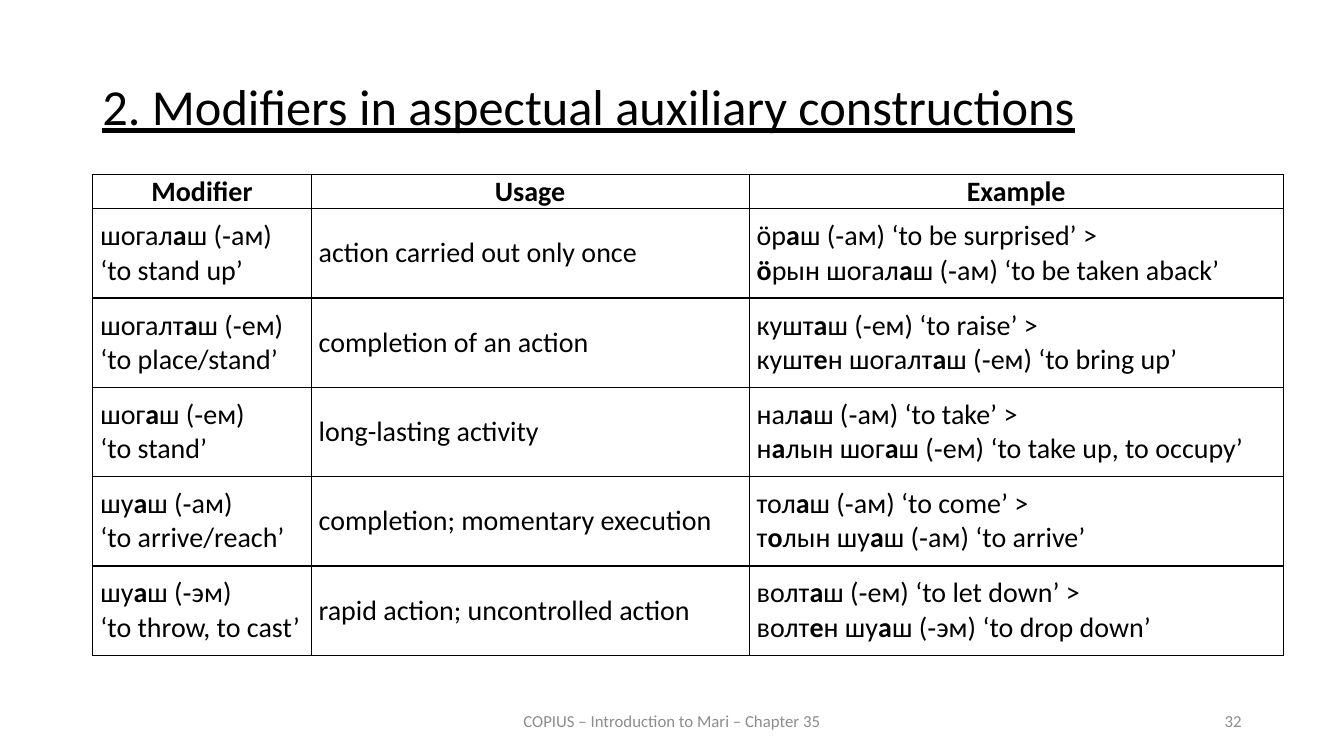
from dataclasses import dataclass

import pptx
import pptx.dml.color
import pptx.enum.text
import pptx.oxml
import pptx.oxml.ns
import pptx.slide
import pptx.table
import pptx.text.text
import pptx.util

Cm = pptx.util.Cm
Align = pptx.enum.text.PP_ALIGN
Anchor = pptx.enum.text.MSO_ANCHOR


@dataclass(frozen=True)
class Theme:
    font: str = "Calibri"
    ink: str = "000000"
    muted: str = "8C8C8C"
    title_size: int = 36
    table_size: int = 20
    footer_size: int = 12
    border_width: int = 1


@dataclass(frozen=True)
class Label:
    text: str
    left: float
    top: float
    width: float
    height: float
    size: int
    color: str
    align: Align
    anchor: Anchor = Anchor.MIDDLE
    underline: bool = False
    line_spacing: float = 1.0


@dataclass(frozen=True)
class Modifier:
    """One table row; asterisks enclose a stressed vowel."""
    verb: str
    meaning: str
    usage: str
    base: str
    construction: str


THEME = Theme()

LABELS = [
    Label("2. Modifiers in aspectual auxiliary constructions", 2.33, 1.93, 29.21, 2.11,
          THEME.title_size, THEME.ink, Align.JUSTIFY, Anchor.TOP, True, 0.9),
    Label("COPIUS – Introduction to Mari – Chapter 35", 11.22, 17.65, 11.43, 1.01,
          THEME.footer_size, THEME.muted, Align.CENTER),
    Label("32", 23.92, 17.65, 7.62, 1.01, THEME.footer_size, THEME.muted, Align.RIGHT),
]

HEADINGS = ["Modifier", "Usage", "Example"]
MODIFIERS = [
    Modifier("шогал*а*ш (‑ам)", "‘to stand up’", "action carried out only once",
             "ӧр*а*ш (‑ам) ‘to be surprised’ >",
             "*ӧ*рын шогал*а*ш (‑ам) ‘to be taken aback’"),
    Modifier("шогалт*а*ш (‑ем)", "‘to place/stand’", "completion of an action",
             "кушт*а*ш (‑ем) ‘to raise’ >",
             "кушт*е*н шогалт*а*ш (‑ем) ‘to bring up’"),
    Modifier("шог*а*ш (‑ем)", "‘to stand’", "long-lasting activity",
             "нал*а*ш (‑ам) ‘to take’ >",
             "н*а*лын шог*а*ш (‑ем) ‘to take up, to occupy’"),
    Modifier("шу*а*ш (‑ам)", "‘to arrive/reach’", "completion; momentary execution",
             "тол*а*ш (‑ам) ‘to come’ >",
             "т*о*лын шу*а*ш (‑ам) ‘to arrive’"),
    Modifier("шу*а*ш (‑эм)", "‘to throw, to cast’", "rapid action; uncontrolled action",
             "волт*а*ш (‑ем) ‘to let down’ >",
             "волт*е*н шу*а*ш (‑эм) ‘to drop down’"),
]

TABLE_LEFT, TABLE_TOP = 2.34, 4.4
COLUMN_WIDTHS = [5.5, 11.04, 13.46]
HEADING_HEIGHT, ROW_HEIGHT = 0.86, 2.25
CELL_MARGIN = 0.19


def style_run(run: pptx.text.text._Run, size: int, color: str, bold: bool = False) -> None:
    run.font.name = THEME.font
    run.font.size = pptx.util.Pt(size)
    run.font.color.rgb = pptx.dml.color.RGBColor.from_string(color)
    run.font.bold = bold


def add_label(slide: pptx.slide.Slide, label: Label) -> None:
    box = slide.shapes.add_textbox(
        Cm(label.left), Cm(label.top), Cm(label.width), Cm(label.height))
    frame = box.text_frame
    frame.word_wrap = True
    frame.vertical_anchor = label.anchor
    frame.text = label.text
    paragraph = frame.paragraphs[0]
    paragraph.alignment = label.align
    paragraph.line_spacing = label.line_spacing
    style_run(paragraph.runs[0], label.size, label.color)
    paragraph.runs[0].font.underline = label.underline


def add_borders(cell: pptx.table._Cell) -> None:
    properties = cell._tc.get_or_add_tcPr()
    width = pptx.util.Pt(THEME.border_width)
    for side in ("lnL", "lnR", "lnT", "lnB"):
        properties.append(pptx.oxml.parse_xml(
            f'<a:{side} {pptx.oxml.ns.nsdecls("a")} w="{width}"><a:solidFill>'
            f'<a:srgbClr val="{THEME.ink}"/></a:solidFill></a:{side}>'))


def fill_cell(cell: pptx.table._Cell, lines: list[str], align: Align,
              anchor: Anchor = Anchor.MIDDLE) -> None:
    """Write one paragraph per line, with the parts between asterisks in bold."""
    add_borders(cell)
    cell.fill.background()
    cell.margin_left = cell.margin_right = Cm(CELL_MARGIN)
    cell.margin_top = cell.margin_bottom = 0
    cell.vertical_anchor = anchor
    frame = cell.text_frame
    for index, line in enumerate(lines):
        paragraph = frame.add_paragraph() if index else frame.paragraphs[0]
        paragraph.alignment = align
        for position, part in enumerate(line.split("*")):
            if part:
                run = paragraph.add_run()
                run.text = part
                style_run(run, THEME.table_size, THEME.ink, bold=position % 2 == 1)


def add_modifier_table(slide: pptx.slide.Slide) -> None:
    heights = [HEADING_HEIGHT] + [ROW_HEIGHT] * len(MODIFIERS)
    table = slide.shapes.add_table(
        len(heights), len(HEADINGS), Cm(TABLE_LEFT), Cm(TABLE_TOP),
        Cm(sum(COLUMN_WIDTHS)), Cm(sum(heights))).table
    table.first_row = table.horz_banding = False
    for column, width in zip(table.columns, COLUMN_WIDTHS):
        column.width = Cm(width)
    for row, height in zip(table.rows, heights):
        row.height = Cm(height)

    for column, heading in enumerate(HEADINGS):
        fill_cell(table.cell(0, column), [f"*{heading}*"], Align.CENTER, Anchor.TOP)
    for row, modifier in enumerate(MODIFIERS, start=1):
        fill_cell(table.cell(row, 0), [modifier.verb, modifier.meaning], Align.JUSTIFY)
        fill_cell(table.cell(row, 1), [modifier.usage], Align.LEFT)
        fill_cell(table.cell(row, 2), [modifier.base, modifier.construction], Align.LEFT)


def main() -> None:
    presentation = pptx.Presentation()
    presentation.slide_width, presentation.slide_height = Cm(33.87), Cm(19.05)
    slide = presentation.slides.add_slide(presentation.slide_layouts[6])
    for label in LABELS:
        add_label(slide, label)
    add_modifier_table(slide)
    presentation.save("out.pptx")


if __name__ == "__main__":
    main()
